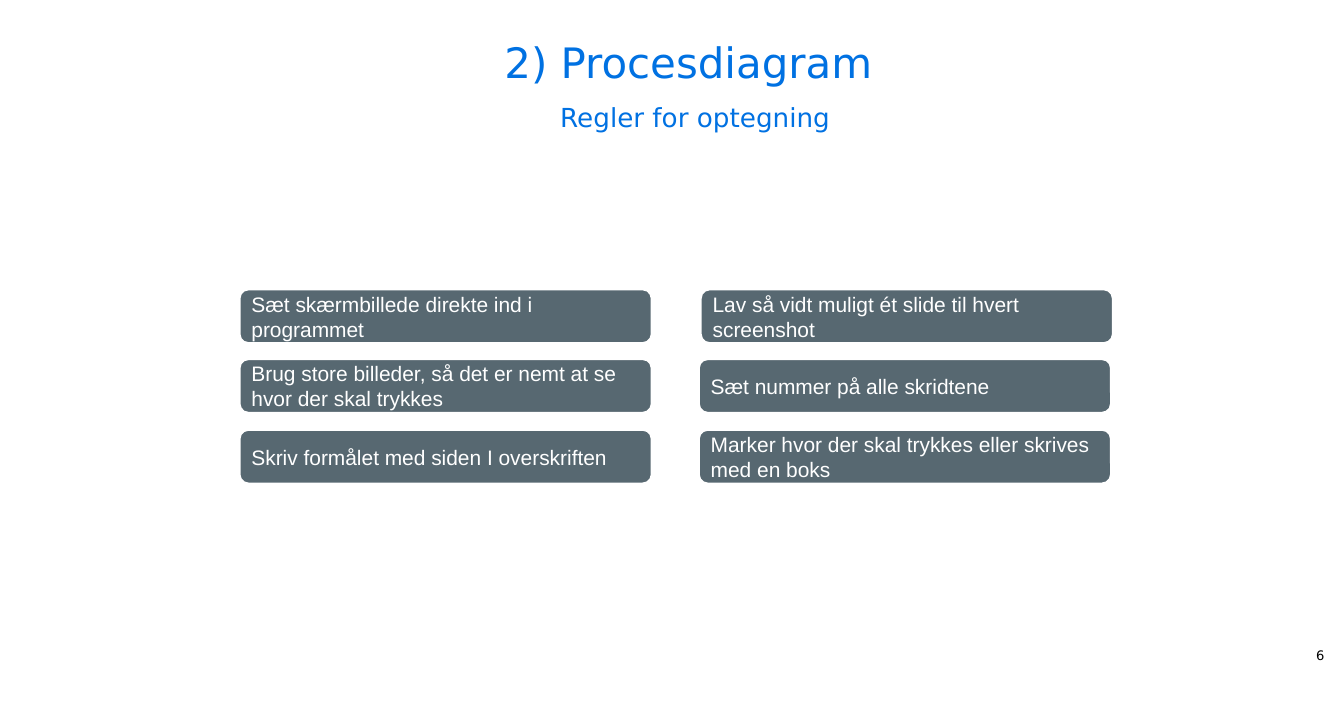
from pptx import Presentation
from pptx.dml.color import RGBColor
from pptx.enum.shapes import MSO_SHAPE as Shape
from pptx.enum.text import MSO_ANCHOR as Anchor, MSO_AUTO_SIZE as AutoSize, PP_ALIGN as Align
from pptx.util import Pt

EMU_PER_PX = 9144  # 100 px to the inch
BLUE, SLATE, WHITE, BLACK = "0071E2", "576871", "FFFFFF", "000000"
HEADING_FONT, RULE_FONT = "DejaVu Sans", "Arial"
RULE_WIDTH, RULE_HEIGHT = 437, 57
LEFT_COLUMN = 254

# Top of the row, left rule, left edge of the right rule, right rule
RULE_ROWS = [
    (307, "Sæt skærmbillede direkte ind i programmet",
     743, "Lav så vidt muligt ét slide til hvert screenshot"),
    (381, "Brug store billeder, så det er nemt at se hvor der skal trykkes",
     741, "Sæt nummer på alle skridtene"),
    (456, "Skriv formålet med siden I overskriften",
     741, "Marker hvor der skal trykkes eller skrives med en boks"),
]


def px(*lengths):
    return [length * EMU_PER_PX for length in lengths]


def color(hex_string):
    return RGBColor.from_string(hex_string)


def write(shape, text, size, font_name, hex_color, align, anchor):
    frame = shape.text_frame
    frame.text = text
    frame.word_wrap = True
    frame.auto_size = AutoSize.NONE
    frame.vertical_anchor = anchor
    paragraph = frame.paragraphs[0]
    paragraph.alignment = align
    paragraph.space_before = Pt(0)
    font = paragraph.runs[0].font
    font.size = Pt(size)
    font.name = font_name
    font.color.rgb = color(hex_color)


def fill_heading(placeholder, text, size, left, top, width, height):
    placeholder.left, placeholder.top, placeholder.width, placeholder.height = px(
        left, top, width, height)
    write(placeholder, text, size, HEADING_FONT, BLUE, Align.CENTER, Anchor.TOP)


def add_rule(slide, text, left, top):
    box = slide.shapes.add_shape(
        Shape.ROUNDED_RECTANGLE, *px(left, top, RULE_WIDTH, RULE_HEIGHT))
    box.shadow.inherit = False
    box.fill.solid()
    box.fill.fore_color.rgb = color(SLATE)
    box.line.color.rgb = color(WHITE)
    box.line.width = Pt(1.5)
    write(box, text, 16, RULE_FONT, WHITE, Align.LEFT, Anchor.MIDDLE)


def add_page_number(slide, number):
    box = slide.shapes.add_textbox(*px(1358, 682, 84, 31))
    write(box, number, 10, HEADING_FONT, BLACK, Align.CENTER, Anchor.TOP)


def main():
    presentation = Presentation()
    presentation.slide_width, presentation.slide_height = px(1425, 750)
    slide = presentation.slides.add_slide(presentation.slide_layouts[0])
    title, subtitle = slide.placeholders
    fill_heading(title, "2) Procesdiagram", 32, 130, 34, 1200, 62)
    fill_heading(subtitle, "Regler for optegning", 20, 137, 102, 1200, 42)
    for top, left_rule, right_column, right_rule in RULE_ROWS:
        add_rule(slide, left_rule, LEFT_COLUMN, top)
        add_rule(slide, right_rule, right_column, top)
    add_page_number(slide, "6")
    presentation.save("out.pptx")


if __name__ == "__main__":
    main()
